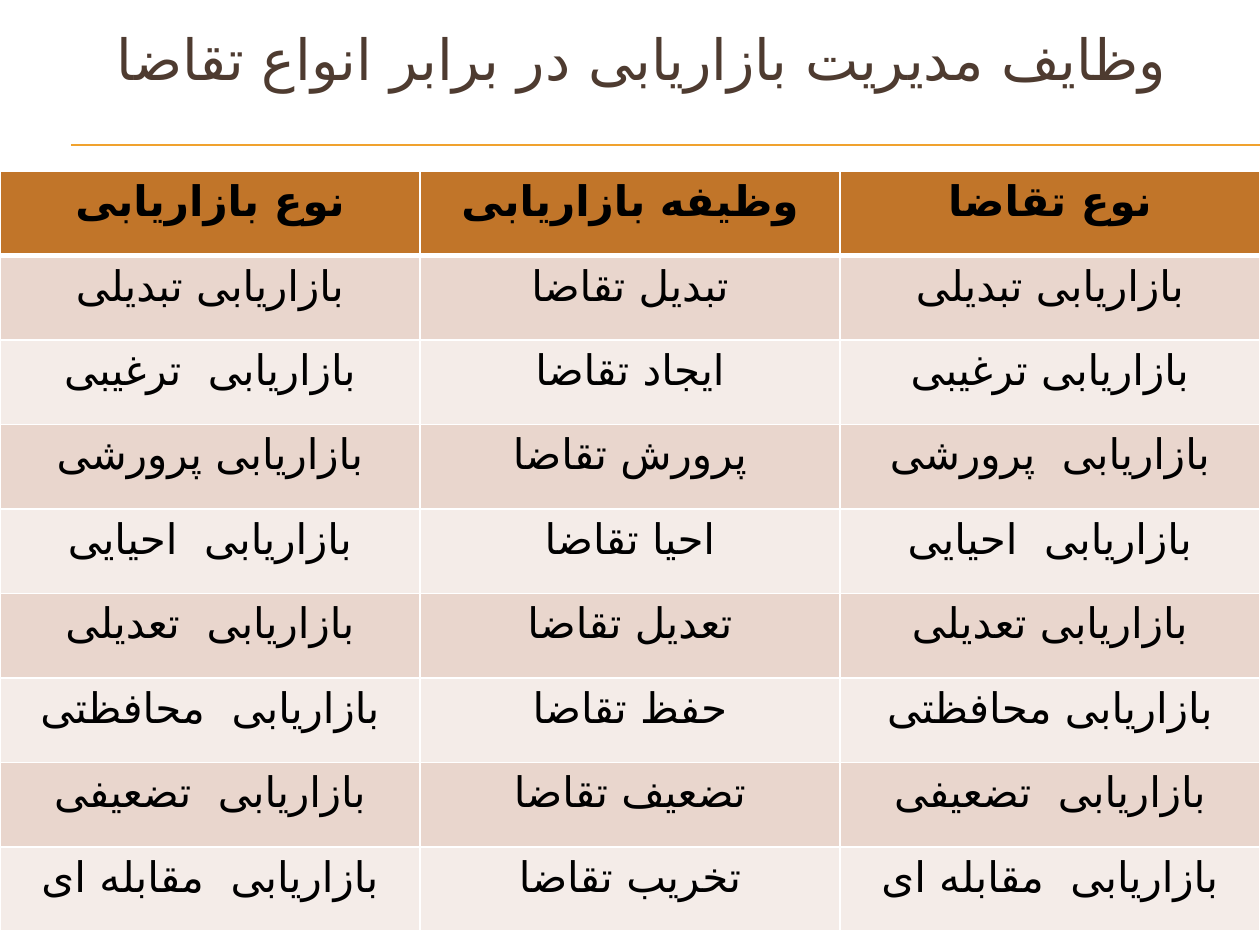
"""Build a slide with a table of marketing tasks for each type of demand."""
import pptx
import pptx.util
import pptx.dml.color
import pptx.enum.shapes
import pptx.enum.text
import pptx.oxml.ns
from lxml import etree

Pt = pptx.util.Pt
RGBColor = pptx.dml.color.RGBColor
qn = pptx.oxml.ns.qn

TITLE = "وظایف مدیریت بازاریابی در برابر انواع تقاضا"
ROWS = [
    ("نوع بازاریابی", "وظیفه بازاریابی", "نوع تقاضا"),
    ("بازاریابی تبدیلی", "تبدیل تقاضا", "بازاریابی تبدیلی"),
    ("بازاریابی  ترغیبی", "ایجاد تقاضا", "بازاریابی ترغیبی"),
    ("بازاریابی پرورشی", "پرورش تقاضا", "بازاریابی  پرورشی"),
    ("بازاریابی  احیایی", "احیا تقاضا", "بازاریابی  احیایی"),
    ("بازاریابی  تعدیلی", "تعدیل تقاضا", "بازاریابی تعدیلی"),
    ("بازاریابی  محافظتی", "حفظ تقاضا", "بازاریابی محافظتی"),
    ("بازاریابی  تضعیفی", "تضعیف تقاضا", "بازاریابی  تضعیفی"),
    ("بازاریابی  مقابله ای", "تخریب تقاضا", "بازاریابی  مقابله ای"),
]

FONT, ARABIC_FONT = "Roboto", "DejaVu Sans"
BROWN = RGBColor(0x4E, 0x3B, 0x30)
GOLD = RGBColor(0xF0, 0xA2, 0x2E)
HEADER = RGBColor(0xC1, 0x75, 0x29)
BANDS = RGBColor(0xF4, 0xEC, 0xE8), RGBColor(0xE9, 0xD6, 0xCD)
BLACK = RGBColor(0, 0, 0)
WHITE = RGBColor(0xFF, 0xFF, 0xFF)

WIDTH, HEIGHT = 720, 540
TABLE_TOP, ROW_HEIGHT = 97.9, 48.26
RULES = [(40.5, 82.8), (40.5, 83.3)]


def write(tf, text, size, color, bold=False):
    tf.text = text
    p = tf.paragraphs[0]
    p.alignment = pptx.enum.text.PP_ALIGN.CENTER
    p._p.get_or_add_pPr().set("rtl", "1")
    r = p.runs[0]
    r.font.name, r.font.size, r.font.bold = FONT, Pt(size), bold
    r.font.color.rgb = color
    etree.SubElement(r._r.get_or_add_rPr(), qn("a:cs"), typeface=ARABIC_FONT)


def add_borders(cell, bottom):
    tcPr = cell._tc.get_or_add_tcPr()
    widths = {"a:lnL": 1, "a:lnR": 1, "a:lnT": 1, "a:lnB": bottom}
    for i, (side, width) in enumerate(widths.items()):
        ln = etree.Element(qn(side), w=str(Pt(width)))
        fill = etree.SubElement(ln, qn("a:solidFill"))
        etree.SubElement(fill, qn("a:srgbClr"), val=str(WHITE))
        tcPr.insert(i, ln)


def main():
    prs = pptx.Presentation()
    prs.slide_width, prs.slide_height = Pt(WIDTH), Pt(HEIGHT)
    s = prs.slides.add_slide(prs.slide_layouts[6])

    for x, y in RULES:
        line = s.shapes.add_connector(
            pptx.enum.shapes.MSO_CONNECTOR.STRAIGHT, Pt(x), Pt(y), Pt(WIDTH), Pt(y))
        line.line.color.rgb, line.line.width = GOLD, Pt(0.75)
        etree.SubElement(line._element.spPr, qn("a:effectLst"))

    tf = s.shapes.add_textbox(Pt(25), Pt(13), Pt(684), Pt(39.6)).text_frame
    tf.word_wrap = True
    tf.vertical_anchor = pptx.enum.text.MSO_ANCHOR.MIDDLE
    write(tf, TITLE, 32.4, BROWN)

    table = s.shapes.add_table(len(ROWS), len(ROWS[0]), 0, Pt(TABLE_TOP),
                               Pt(WIDTH), Pt(ROW_HEIGHT * len(ROWS))).table
    table.horz_banding = False
    for i, row in enumerate(ROWS):
        table.rows[i].height = Pt(ROW_HEIGHT)
        for j, text in enumerate(row):
            cell = table.cell(i, j)
            cell.margin_left = cell.margin_right = Pt(7.9)
            cell.margin_top = cell.margin_bottom = Pt(3.6)
            cell.fill.solid()
            cell.fill.fore_color.rgb = BANDS[i % 2] if i else HEADER
            write(cell.text_frame, text, 24, BLACK, bold=i == 0)
            add_borders(cell, bottom=1 if i else 3)

    prs.save("out.pptx")


if __name__ == "__main__":
    main()
